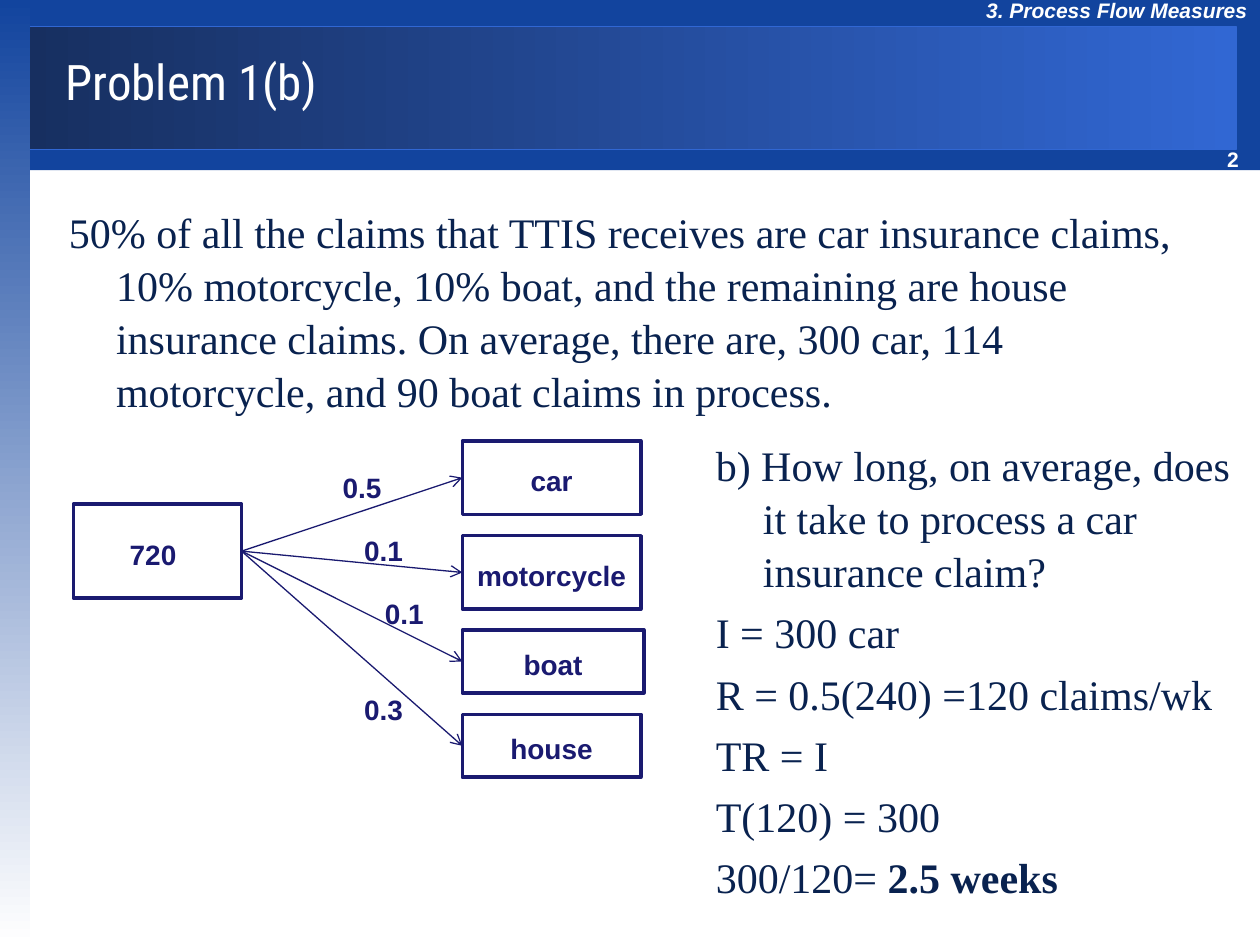
from typing import NamedTuple

from lxml import etree
from pptx import Presentation
from pptx.dml.color import RGBColor
from pptx.enum.shapes import MSO_CONNECTOR, MSO_SHAPE
from pptx.enum.text import MSO_ANCHOR, PP_ALIGN
from pptx.oxml.ns import qn
from pptx.util import Cm, Pt

RECTANGLE = MSO_SHAPE.RECTANGLE
STRAIGHT = MSO_CONNECTOR.STRAIGHT
LEFT, CENTER = PP_ALIGN.LEFT, PP_ALIGN.CENTER
MIDDLE = MSO_ANCHOR.MIDDLE
TITLE_ONLY = 5
LEFT_SIDE, RIGHT_SIDE = 1, 3

COLORS = {
    "band": "12449E",
    "banner_dark": "172F60",
    "banner_light": "3167D3",
    "white": "FFFFFF",
    "diagram": "1A1A70",
    "text": "09224F",
}
HEADER = {"name": "Arial", "size": Pt(12), "bold": True, "italic": True}
PAGE_NUMBER = {"name": "Arial", "size": Pt(12), "bold": True}
TITLE = {"name": "Roboto Condensed", "size": Pt(28), "bold": False}
BODY = {"name": "Times New Roman", "size": Pt(24)}
DIAGRAM = {"name": "Arial", "size": Pt(16), "bold": True}
HANGING = Cm(0.95)


class Area(NamedTuple):
    left: float
    top: float
    width: float
    height: float

    def lengths(self):
        return [Cm(value) for value in self]


class Branch(NamedTuple):
    claim: str
    box: Area
    share: str
    share_area: Area


BRANCHES = [
    Branch("car", Area(9.32, 8.89, 3.6, 1.48), "0.5", Area(6.77, 9.48, 1.06, 0.68)),
    Branch("motorcycle", Area(9.32, 10.8, 3.6, 1.48), "0.1", Area(7.2, 10.75, 1.06, 0.68)),
    Branch("boat", Area(9.32, 12.7, 3.66, 1.27), "0.1", Area(7.62, 12.02, 1.06, 0.68)),
    Branch("house", Area(9.32, 14.4, 3.6, 1.27), "0.3", Area(7.2, 13.97, 1.06, 0.68)),
]
SITUATION = (
    "50% of all the claims that TTIS receives are car insurance claims, "
    "10% motorcycle, 10% boat, and the remaining are house insurance claims. "
    "On average, there are, 300 car, 114 motorcycle, and 90 boat claims in process."
)
SOLUTION = [
    "b) How long, on average, does it take to process a car insurance claim?",
    "I = 300 car",
    "R = 0.5(240) =120 claims/wk",
    "TR = I",
    "T(120) = 300",
    "300/120= ",
]


def rgb(color: str) -> RGBColor:
    return RGBColor.from_string(COLORS[color])


def add_run(paragraph, text: str, font: dict, color: str):
    run = paragraph.add_run()
    run.text = text
    for attribute, value in font.items():
        setattr(run.font, attribute, value)
    run.font.color.rgb = rgb(color)
    return run


def set_margins(frame, horizontal: float, vertical: float) -> None:
    frame.margin_left = frame.margin_right = Cm(horizontal)
    frame.margin_top = frame.margin_bottom = Cm(vertical)


def add_panel(slide, area: Area, colors: list[str], angle: int = 0):
    panel = slide.shapes.add_shape(RECTANGLE, *area.lengths())
    panel.shadow.inherit = False
    panel.line.fill.background()
    if len(colors) == 1:
        panel.fill.solid()
        panel.fill.fore_color.rgb = rgb(colors[0])
    else:
        panel.fill.gradient()
        panel.fill.gradient_angle = angle
        for stop, color in zip(panel.fill.gradient_stops, colors):
            stop.color.rgb = rgb(color)
    return panel


def add_label(slide, area: Area, text: str, font: dict, color: str):
    label = slide.shapes.add_textbox(*area.lengths())
    label.text_frame.word_wrap = False
    add_run(label.text_frame.paragraphs[0], text, font, color)
    return label


def add_share(slide, branch: Branch) -> None:
    label = add_label(slide, branch.share_area, branch.share, DIAGRAM, "diagram")
    label.text_frame.word_wrap = True
    set_margins(label.text_frame, 0, 0)
    label.text_frame.paragraphs[0].alignment = CENTER


def add_box(slide, area: Area, text: str):
    box = slide.shapes.add_shape(RECTANGLE, *area.lengths())
    box.shadow.inherit = False
    box.fill.background()
    box.line.color.rgb = rgb("diagram")
    box.line.width = Pt(2)
    frame = box.text_frame
    set_margins(frame, 0, 0)
    frame.margin_top = Cm(0.12)
    frame.vertical_anchor = MIDDLE
    frame.paragraphs[0].alignment = CENTER
    add_run(frame.paragraphs[0], text, DIAGRAM, "diagram")
    return box


def add_arrow(slide, source, target) -> None:
    arrow = slide.shapes.add_connector(STRAIGHT, 0, 0, 0, 0)
    arrow.begin_connect(source, RIGHT_SIDE)
    arrow.end_connect(target, LEFT_SIDE)
    arrow.line.color.rgb = rgb("diagram")
    arrow.line.width = Pt(0.75)
    etree.SubElement(arrow.line._get_or_add_ln(), qn("a:tailEnd"), type="arrow")
    etree.SubElement(arrow._element.spPr, qn("a:effectLst"))


def add_body(slide, area: Area, lines: list[str]):
    body = slide.shapes.add_textbox(*area.lengths())
    frame = body.text_frame
    frame.word_wrap = True
    for index, line in enumerate(lines):
        paragraph = frame.add_paragraph() if index else frame.paragraphs[0]
        paragraph.space_before = Pt(4.8)
        paragraph.line_spacing = 1.05
        properties = paragraph._p.get_or_add_pPr()
        properties.set("marL", str(HANGING))
        properties.set("indent", str(-HANGING))
        add_run(paragraph, line, BODY, "text")
    return body


def add_title(slide, area: Area, text: str) -> None:
    title = slide.shapes.title
    title.left, title.top, title.width, title.height = area.lengths()
    title.text_frame.vertical_anchor = MIDDLE
    paragraph = title.text_frame.paragraphs[0]
    paragraph.alignment = LEFT
    add_run(paragraph, text, TITLE, "white")
    slide.shapes._spTree.append(title._element)


def main() -> None:
    deck = Presentation()
    deck.slide_width, deck.slide_height = Cm(25.4), Cm(19.05)
    slide = deck.slides.add_slide(deck.slide_layouts[TITLE_ONLY])

    add_panel(slide, Area(0.51, 0, 24.89, 3.43), ["band"])
    banner = add_panel(slide, Area(0.51, 0.53, 24.41, 2.49), ["banner_dark", "banner_light"])
    banner.line.color.rgb = rgb("banner_light")
    banner.line.width = Pt(0.75)
    add_panel(slide, Area(0, 0, 0.61, 19.05), ["band", "white"], 270)
    add_label(slide, Area(24.49, 2.82, 0.9, 0.76), "2", PAGE_NUMBER, "white")
    add_label(slide, Area(19.63, -0.18, 5.77, 0.76), "3. Process Flow Measures", HEADER, "white")
    add_title(slide, Area(1.07, 0.43, 23.6, 2.39), "Problem 1(b)")
    add_body(slide, Area(1.14, 3.99, 23.04, 4.27), [SITUATION])

    claims = add_box(slide, Area(1.48, 10.16, 3.39, 1.9), "720")
    claims.text_frame.margin_right = Cm(0.18)
    for branch in BRANCHES:
        add_arrow(slide, claims, add_box(slide, branch.box, branch.claim))
        add_share(slide, branch)

    solution = add_body(slide, Area(14.18, 8.69, 11.22, 9.95), SOLUTION)
    add_run(solution.text_frame.paragraphs[-1], "2.5 weeks", {**BODY, "bold": True}, "text")
    deck.save("out.pptx")


if __name__ == "__main__":
    main()
